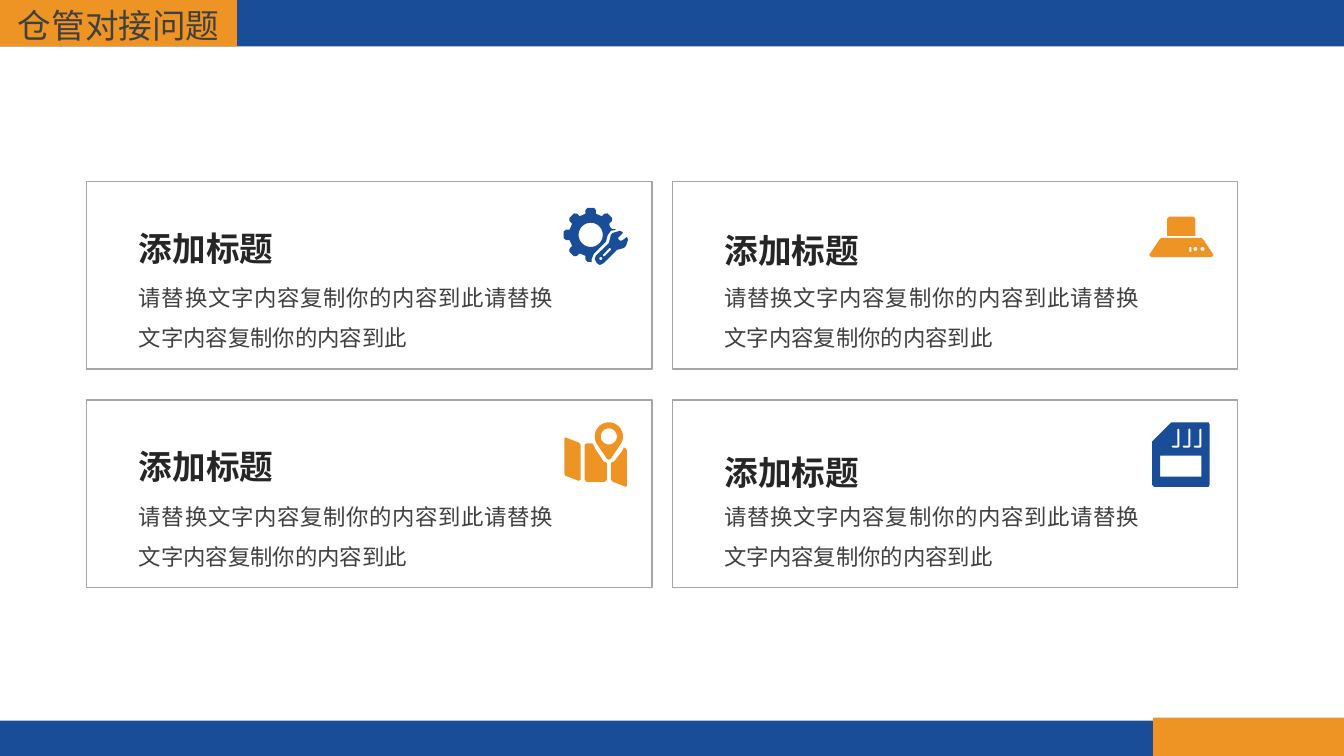
"""Build the warehouse handover slide: header and footer bands around four captioned cards."""
from dataclasses import dataclass
from math import cos, radians, sin

from lxml.etree import SubElement
from pptx import Presentation
from pptx.dml.color import RGBColor
from pptx.enum.shapes import MSO_SHAPE
from pptx.enum.text import MSO_AUTO_SIZE, PP_ALIGN
from pptx.oxml.ns import qn
from pptx.shapes.autoshape import Shape
from pptx.slide import Slide
from pptx.util import Inches, Length, Pt

Point = tuple[float, float]
Contour = list[Point]

COLUMNS, ROWS = 133.33, 75
UNIT = 0.1
ICON_STEPS = 100
FONT = "Noto Sans CJK SC"
BLUE, ORANGE = "194D97", "EE9424"
BORDER, TITLE_INK, BODY_INK = "A6A6A6", "262626", "404040"

CARD_LEFT, CARD_TOP = 8.6, 18
CARD_WIDTH, CARD_HEIGHT = 56.1, 18.6
CARD_PITCH_X, CARD_PITCH_Y = 58.1, 21.7
TEXT_INDENT, BODY_DROP = 4.2, 8.35

TITLE = "添加标题"
BODY = "请替换文字内容复制你的内容到此请替换文字内容复制你的内容到此"


@dataclass(frozen=True)
class Box:
    """A rectangle in grid columns and rows."""
    left: float
    top: float
    width: float
    height: float


@dataclass(frozen=True)
class Band:
    """A filled strip at the edge of the slide."""
    box: Box
    fill: str


@dataclass(frozen=True)
class TextStyle:
    """The look of one line of copy."""
    size: int
    color: str
    spacing: float = 1.0
    bold: bool = False
    wrap: bool = True


@dataclass(frozen=True)
class Icon:
    """Outlines in tenths of a grid unit, placed from the card's corner."""
    left: float
    top: float
    fill: str
    contours: list[Contour]


@dataclass(frozen=True)
class Card:
    """One cell of the two by two grid."""
    column: int
    row: int
    title_drop: float
    icon: Icon


def grid(units: float) -> Length:
    """Turn grid units into a length."""
    return Inches(units * UNIT)


def color(code: str) -> RGBColor:
    """Turn a hex string into a colour."""
    return RGBColor.from_string(code)


def arc(x: float, y: float, radius: float, start: int = 0, end: int = 360) -> Contour:
    """Return points along a circular arc."""
    return [(x + radius * cos(radians(a)), y + radius * sin(radians(a)))
            for a in range(start, end + 1, 10)]


def shifted(contour: Contour, dx: float, dy: float) -> Contour:
    """Move a contour."""
    return [(x + dx, y + dy) for x, y in contour]


def gear_teeth(center: float) -> Contour:
    """Return the toothed rim that stays clear of the wrench."""
    profile = [(21.5, -14), (25, -12), (27, -7), (27, 7), (25, 12), (21.5, 14)]
    rim = [(center + radius * cos(radians(tooth + turn)), center + radius * sin(radians(tooth + turn)))
           for tooth in range(90, 316, 45) for radius, turn in profile]
    return rim[3:]


def gear_and_wrench() -> list[Contour]:
    """Return the maintenance icon."""
    cut = [(46, 19), (48, 21), (50, 21), (52, 22), (47, 23), (44, 27), (42, 34), (30, 46), (28, 51), (28, 54)]
    wrench = [(56, 23), (58, 24), (59, 25), (54, 30), (55, 32), (57, 33), (59, 32), (63, 29),
              (64, 32), (62, 38), (60, 40), (53, 42), (40, 55), (36, 57), (33, 55), (31, 51),
              (32, 48), (45, 35), (47, 27), (49, 25)]
    slot = [(45.5, 40), (39, 47), (39.5, 48.5), (41, 48), (47, 42), (47, 40.5)]
    return [gear_teeth(27) + cut, arc(27, 27, 12), wrench, slot, arc(37, 50.5, 1.5)]


def cooker_hood() -> list[Contour]:
    """Return the hood icon."""
    chimney = [(20, 0), (44, 0), (46, 2), (46, 19), (18, 19), (18, 2)]
    canopy = [(12, 21), (52, 21), (54, 23), (64, 38), (62, 40), (2, 40), (0, 38), (10, 23)]
    switch = [(40, 30), (42, 30), (42, 35), (40, 35)]
    return [chimney, canopy, switch, arc(46, 32, 2), arc(53, 32, 2)]


def folded_map() -> list[Contour]:
    """Return the map icon with its pin."""
    left = [(1, 15), (14, 20), (16, 22), (16, 57), (14, 58), (1, 53), (0, 51), (0, 16)]
    middle = [(22, 21), (28, 21), (31, 27), (39, 39), (42, 40), (42, 57), (40, 59),
              (22, 59), (20, 57), (20, 22)]
    right = [(59, 25), (61, 26), (62, 28), (62, 63), (61, 64), (48, 59), (46, 57),
             (46, 40), (49, 39), (57, 29)]
    pin = arc(44, 14, 14, 150, 390) + [(46, 36), (44, 37), (42, 36)]
    return [left, middle, right, pin, arc(44, 14, 8)]


def memory_card() -> list[Contour]:
    """Return the storage card icon."""
    case = [(56, 0), (19, 0), (0, 19), (0, 62), (2, 64), (56, 64), (57, 62), (57, 2)]
    contact = [(1, 23), (6, 23), (6, 7), (7, 6), (8, 7), (8, 24), (7, 25), (1, 25), (0, 24)]
    label = [(8, 33), (49, 33), (49, 54), (8, 54)]
    return [case, label] + [shifted(contact, 19 + 11 * index, 0) for index in range(3)]


def add_rectangle(slide: Slide, box: Box) -> Shape:
    """Add a shadowless rectangle."""
    rectangle = slide.shapes.add_shape(
        MSO_SHAPE.RECTANGLE, grid(box.left), grid(box.top), grid(box.width), grid(box.height))
    rectangle.shadow.inherit = False
    return rectangle


def paint(shape: Shape, fill: str) -> None:
    """Fill a shape and drop its line."""
    shape.fill.solid()
    shape.fill.fore_color.rgb = color(fill)
    shape.line.fill.background()


def add_text(slide: Slide, box: Box, text: str, style: TextStyle) -> None:
    """Add one justified paragraph."""
    frame = slide.shapes.add_textbox(
        grid(box.left), grid(box.top), grid(box.width), grid(box.height)).text_frame
    frame.word_wrap = style.wrap
    frame.auto_size = MSO_AUTO_SIZE.SHAPE_TO_FIT_TEXT
    frame.text = text
    paragraph = frame.paragraphs[0]
    paragraph.alignment = PP_ALIGN.JUSTIFY
    paragraph.line_spacing = style.spacing
    font = paragraph.runs[0].font
    font.size, font.bold, font.name = Pt(style.size), style.bold, FONT
    font.color.rgb = color(style.color)
    SubElement(paragraph.runs[0]._r.get_or_add_rPr(), qn("a:ea"), typeface=FONT)


def add_icon(slide: Slide, icon: Icon, left: float, top: float) -> None:
    """Draw an icon as a single outline with holes."""
    scale = grid(1) / (10 * ICON_STEPS)
    contours = [[(x * ICON_STEPS, y * ICON_STEPS) for x, y in contour] for contour in icon.contours]
    builder = slide.shapes.build_freeform(*contours[0][0], scale=scale)
    builder.add_line_segments(contours[0][1:], close=True)
    for contour in contours[1:]:
        builder.move_to(*contour[0])
        builder.add_line_segments(contour[1:], close=True)
    outline = builder.convert_to_shape(grid(left + icon.left), grid(top + icon.top))
    outline.shadow.inherit = False
    paint(outline, icon.fill)


def add_card(slide: Slide, card: Card) -> None:
    """Draw a bordered card with its icon, body and title."""
    left = CARD_LEFT + card.column * CARD_PITCH_X
    top = CARD_TOP + card.row * CARD_PITCH_Y
    border = add_rectangle(slide, Box(left, top, CARD_WIDTH, CARD_HEIGHT))
    border.fill.background()
    border.line.color.rgb = color(BORDER)
    border.line.width = Pt(1)
    add_icon(slide, card.icon, left, top)
    indent = left + TEXT_INDENT
    add_text(slide, Box(indent, top + BODY_DROP, 43.1, 8.6), BODY, TextStyle(16, BODY_INK, 1.5))
    add_text(slide, Box(indent, top + card.title_drop, 22.4, 5.4), TITLE,
             TextStyle(24, TITLE_INK, 1.2, bold=True))


def main() -> None:
    """Build and save the slide."""
    presentation = Presentation()
    presentation.slide_width, presentation.slide_height = grid(COLUMNS), grid(ROWS)
    slide = presentation.slides.add_slide(presentation.slide_layouts[6])
    bands = [Band(Box(0, 0, COLUMNS, 4.6), BLUE), Band(Box(0, 71.5, COLUMNS, 3.5), BLUE),
             Band(Box(114.4, 71.2, COLUMNS - 114.4, 3.8), ORANGE), Band(Box(0, 0, 23.5, 4.6), ORANGE)]
    for band in bands:
        paint(add_rectangle(slide, band.box), band.fill)
    add_text(slide, Box(0.8, 0, 22.2, 5), "仓管对接问题", TextStyle(24, BODY_INK, wrap=False))
    cards = [Card(0, 0, 3.3, Icon(47.3, 2.6, BLUE, gear_and_wrench())),
             Card(0, 1, 3.2, Icon(47.4, 2.2, ORANGE, folded_map())),
             Card(1, 0, 3.5, Icon(47.3, 3.5, ORANGE, cooker_hood())),
             Card(1, 1, 3.8, Icon(47.6, 2.2, BLUE, memory_card()))]
    for card in cards:
        add_card(slide, card)
    presentation.save("out.pptx")


if __name__ == "__main__":
    main()
